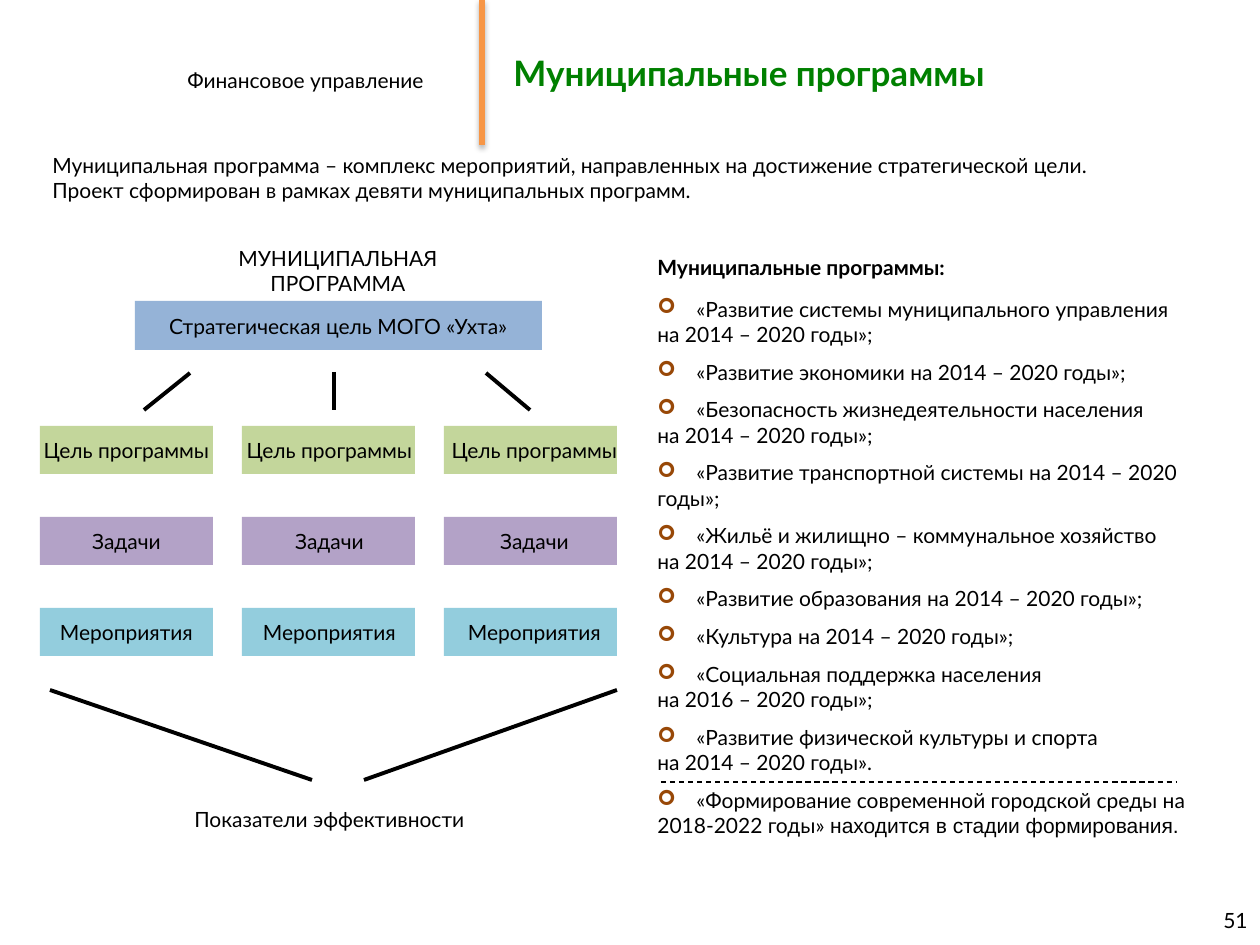
from lxml import etree
from pptx import Presentation
from pptx.dml.color import RGBColor
from pptx.enum.dml import MSO_LINE
from pptx.enum.shapes import MSO_CONNECTOR, MSO_SHAPE
from pptx.enum.text import MSO_ANCHOR, PP_ALIGN
from pptx.oxml.ns import qn
from pptx.util import Emu, Pt

LEFT, MID, RIGHT, JUST = PP_ALIGN.LEFT, PP_ALIGN.CENTER, PP_ALIGN.RIGHT, PP_ALIGN.JUSTIFY
TOP, CORE = MSO_ANCHOR.TOP, MSO_ANCHOR.MIDDLE
RECT, LINE, DASH = MSO_SHAPE.RECTANGLE, MSO_CONNECTOR.STRAIGHT, MSO_LINE.DASH
INCH = 126
HUES = {
    "text": "000000", "title": "008000", "bar": "F79646", "mark": "984807",
    "main": "95B3D7", "goal": "C3D69B", "task": "B3A2C7", "event": "93CDDD",
}
COLS = [(40, 25), (242, 228), (444, 433)]
ROWS = [("Цель программы", "goal"), ("Задачи", "task"), ("Мероприятия", "event")]
LINKS = [
    (190, 373, 144, 410), (486, 373, 530, 410), (334, 372, 334, 410),
    (312, 780, 50, 690), (617, 690, 364, 780),
]
INTRO = [
    "Муниципальная программа – комплекс мероприятий, направленных на достижение стратегической цели.",
    "Проект сформирован в рамках девяти муниципальных программ.",
]
HEAD = "Муниципальные программы:"
ITEMS = [
    ("«Развитие системы муниципального управления", "на 2014 – 2020 годы»;"),
    ("«Развитие экономики на 2014 – 2020 годы»;",),
    ("«Безопасность жизнедеятельности населения", "на 2014 – 2020 годы»;"),
    ("«Развитие транспортной системы на 2014 – 2020", "годы»;"),
    ("«Жильё и жилищно – коммунальное хозяйство", "на 2014 – 2020 годы»;"),
    ("«Развитие образования на 2014 – 2020 годы»;",),
    ("«Культура на 2014 – 2020 годы»;",),
    ("«Социальная поддержка населения", "на 2016 – 2020 годы»;"),
    ("«Развитие физической культуры и спорта", "на 2014 – 2020 годы»."),
    ("«Формирование современной городской среды на", "2018-2022 годы» "),
]
TAIL = "находится в стадии формирования."


def px(num):
    """Turn pixels into EMU."""
    return Emu(round(num * 914400 / INCH))


def hue(name):
    """Look up a colour."""
    return RGBColor.from_string(HUES[name])


def style(font, size=12, tint="text", bold=False, face="Lato"):
    """Set the look of a font."""
    font.name, font.size, font.bold = face, Pt(size), bold
    font.color.rgb = hue(tint)


def add_text(slide, box, lines, align=LEFT, anchor=TOP, wrap=True, **look):
    """Add a text box with one paragraph a line."""
    frame = slide.shapes.add_textbox(*map(px, box)).text_frame
    frame.word_wrap, frame.vertical_anchor = wrap, anchor
    frame.text = "\n".join(lines)
    for para in frame.paragraphs:
        para.alignment = align
        for run in para.runs:
            style(run.font, **look)
    return frame


def add_rect(slide, box, tint):
    """Add a plain filled rectangle."""
    rect = slide.shapes.add_shape(RECT, *map(px, box))
    rect.shadow.inherit = False
    rect.fill.solid()
    rect.fill.fore_color.rgb = hue(tint)
    rect.line.fill.background()


def add_line(slide, ends, width, tint="text", dash=None):
    """Add a line and return its empty effect list."""
    line = slide.shapes.add_connector(LINE, *map(px, ends))
    line.line.width = Pt(width)
    line.line.color.rgb = hue(tint)
    if dash:
        line.line.dash_style = dash
    return etree.SubElement(line._element.spPr, qn("a:effectLst"))


def add_bar(slide):
    """Add the header bar with its soft shadow."""
    effect = add_line(slide, (482, 0, 482, 145), 3, "bar")
    shade = etree.SubElement(
        effect, qn("a:outerShdw"), blurRad="40000", dist="23000", dir="5400000", rotWithShape="0")
    color = etree.SubElement(shade, qn("a:srgbClr"), val=HUES["text"])
    etree.SubElement(color, qn("a:alpha"), val="35000")


def add_mark(para):
    """Give a paragraph a hanging arrow bullet."""
    props = para._p.get_or_add_pPr()
    props.set("marL", str(px(39)))
    props.set("indent", str(-px(39)))
    color = etree.SubElement(props, qn("a:buClr"))
    etree.SubElement(color, qn("a:srgbClr"), val=HUES["mark"])
    etree.SubElement(props, qn("a:buFont"), typeface="Wingdings")
    etree.SubElement(props, qn("a:buChar"), char="➢")


def add_list(slide):
    """Add the list of programmes."""
    lines = [HEAD] + [line for item in ITEMS for line in item]
    frame = add_text(slide, (645, 248, 610, 602), lines)
    paras = frame.paragraphs
    paras[0].runs[0].font.bold = True
    spot = 1
    for item in ITEMS:
        para = paras[spot]
        para.space_before = Pt(9.6 if spot == 1 else 7.2)
        add_mark(para)
        spot += len(item)
    run = paras[-1].add_run()
    run.text = TAIL
    style(run.font, face="Arial")


def add_grid(slide):
    """Add the goals, tasks and events under the main goal."""
    for row, (label, tint) in enumerate(ROWS):
        top = 426 + 91 * row
        for left, start in COLS:
            add_rect(slide, (left, top, 173, 48), tint)
            add_text(slide, (start, top + 5, 203, 38), [label], MID)


def main():
    """Build the slide and save it."""
    deck = Presentation()
    deck.slide_width, deck.slide_height = px(1260), px(945)
    slide = deck.slides.add_slide(deck.slide_layouts[6])
    unit = add_text(slide, (175, 49, 265, 45), ["Финансовое управление"], wrap=False)
    unit.paragraphs[0].line_spacing = 1.5
    add_bar(slide)
    add_text(slide, (501, 0, 759, 145), ["Муниципальные программы"],
             anchor=CORE, size=20, tint="title", bold=True)
    add_text(slide, (966, 895, 294, 50), ["51"], RIGHT, CORE)
    add_text(slide, (40, 146, 1200, 63), INTRO, JUST)
    add_text(slide, (171, 239, 334, 63), ["МУНИЦИПАЛЬНАЯ\vПРОГРАММА"], MID)
    add_rect(slide, (135, 301, 407, 49), "main")
    add_text(slide, (135, 307, 407, 38), ["Стратегическая цель МОГО «Ухта»"], MID)
    add_grid(slide)
    add_text(slide, (181, 800, 297, 38), ["Показатели эффективности"], MID, wrap=False)
    for ends in LINKS:
        add_line(slide, ends, 2.25)
    add_list(slide)
    add_line(slide, (661, 782, 1177, 782), 0.75, dash=DASH)
    deck.save("out.pptx")


if __name__ == "__main__":
    main()
